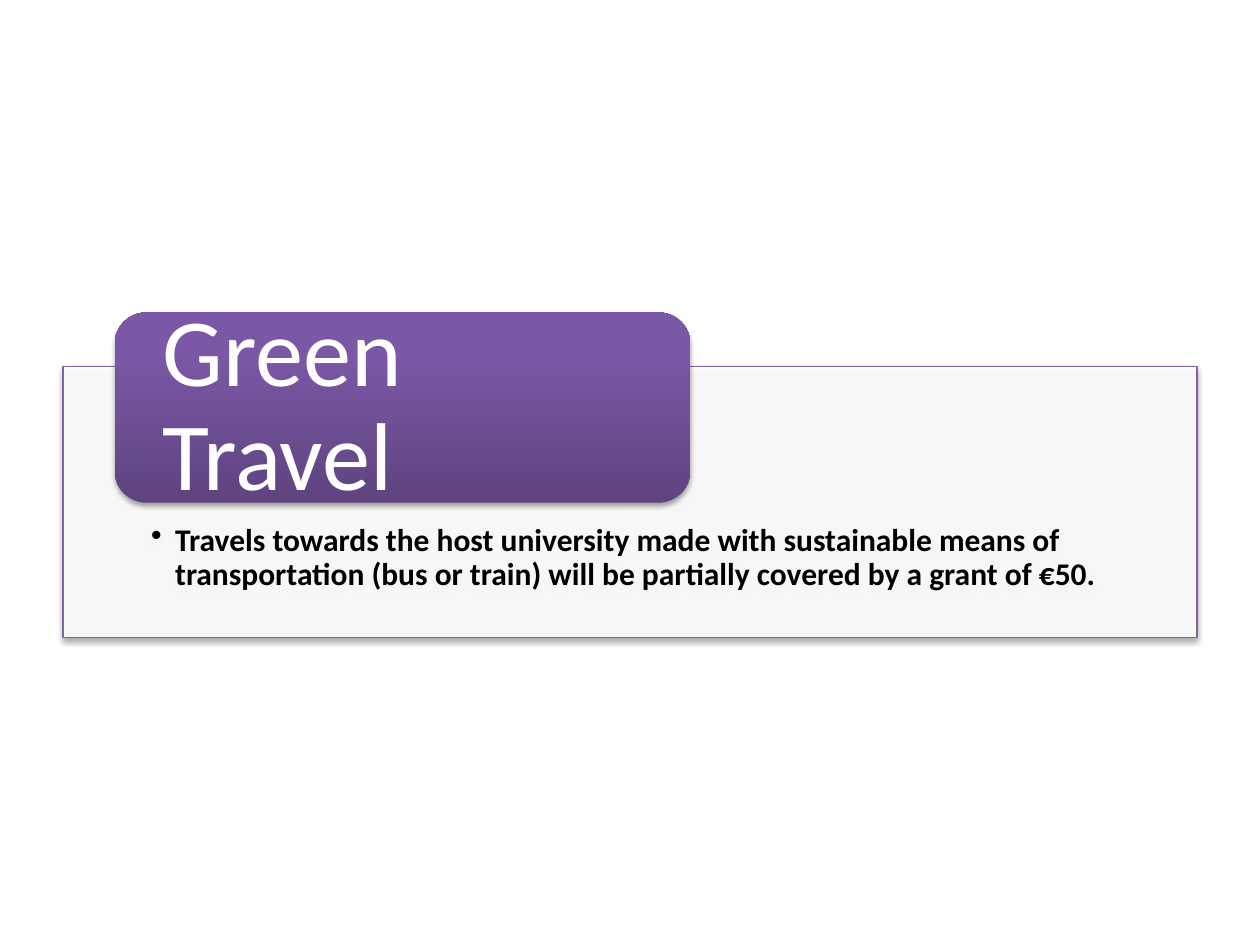
from dataclasses import dataclass

from lxml import etree
from pptx import Presentation
from pptx.dml.color import RGBColor
from pptx.enum.shapes import MSO_SHAPE
from pptx.enum.text import MSO_ANCHOR, PP_ALIGN
from pptx.oxml.ns import qn
from pptx.util import Inches, Pt

RECT, ROUND = MSO_SHAPE.RECTANGLE, MSO_SHAPE.ROUNDED_RECTANGLE
TOP, MIDDLE = MSO_ANCHOR.TOP, MSO_ANCHOR.MIDDLE
LEFT = PP_ALIGN.LEFT


@dataclass(frozen=True)
class Theme:
    font: str = "Calibri"
    white: str = "FFFFFF"
    black: str = "000000"
    edge: str = "8064A2"
    stops: tuple = ((0, "5F4480"), (80, "7B58A6"), (100, "7C57A8"))
    head: int = 55
    body: int = 18


THEME = Theme()


def add(parent, tag, **attrs):
    node = etree.SubElement(parent, qn(tag))
    for key, value in attrs.items():
        node.set(key, str(value))
    return node


def shade(shape):
    """Cast a soft shadow straight down."""
    shape.shadow.inherit = False
    effects = shape._element.spPr.find(qn("a:effectLst"))
    cast = add(effects, "a:outerShdw", blurRad=Pt(3.1), dist=Pt(1.8),
               dir=90 * 60000, rotWithShape=0)
    color = add(cast, "a:srgbClr", val=THEME.black)
    add(color, "a:alpha", val=35000)


def blend(shape, stops):
    """Fill from the bottom up with the given (percent, colour) stops."""
    shape.fill.gradient()
    shape.fill.gradient_angle = 90
    ramp = shape._element.spPr.find(".//" + qn("a:gsLst"))
    for old in list(ramp):
        ramp.remove(old)
    for place, color in stops:
        stop = add(ramp, "a:gs", pos=place * 1000)
        add(stop, "a:srgbClr", val=color)


def write(shape, text, size, color, insets, anchor, bold=False):
    frame = shape.text_frame
    frame.word_wrap = True
    frame.vertical_anchor = anchor
    (frame.margin_left, frame.margin_top,
     frame.margin_right, frame.margin_bottom) = map(Inches, insets)
    frame.text = text
    para = frame.paragraphs[0]
    para.alignment = LEFT
    para.line_spacing = 0.9
    font = para.runs[0].font
    font.name, font.size, font.bold = THEME.font, Pt(size), bold
    font.color.rgb = RGBColor.from_string(color)
    return para


def panel(slide, box, text):
    shape = slide.shapes.add_shape(RECT, *map(Inches, box))
    shape.fill.solid()
    shape.fill.fore_color.rgb = RGBColor.from_string(THEME.white)
    color = shape._element.spPr.find(qn("a:solidFill"))[0]
    add(color, "a:alpha", val=90000)
    shape.line.color.rgb = RGBColor.from_string(THEME.edge)
    shape.line.width = Pt(0.75)
    shade(shape)
    para = write(shape, text, THEME.body, THEME.black,
                 (0.7, 1.25, 0.7, 0.14), TOP, bold=True)
    para.level = 1
    props = para._p.get_or_add_pPr()
    props.set("marL", str(Inches(0.19)))
    props.set("indent", str(-Inches(0.19)))
    add(props, "a:buChar", char="•")


def label(slide, box, text):
    shape = slide.shapes.add_shape(ROUND, *map(Inches, box))
    blend(shape, THEME.stops)
    shape.line.fill.background()
    shade(shape)
    write(shape, text, THEME.head, THEME.white, (0.31, 0, 0.31, 0), MIDDLE)


def main():
    deck = Presentation()
    deck.slide_width, deck.slide_height = Inches(10), Inches(7.5)
    slide = deck.slides.add_slide(deck.slide_layouts[6])
    panel(slide, (0.5, 2.91, 9, 2.15),
          "Travels towards the host university made with sustainable means of "
          "transportation (bus or train) will be partially covered by a grant "
          "of €50.")
    label(slide, (0.91, 2.48, 4.57, 1.51), "Green Travel")
    deck.save("out.pptx")


if __name__ == "__main__":
    main()
